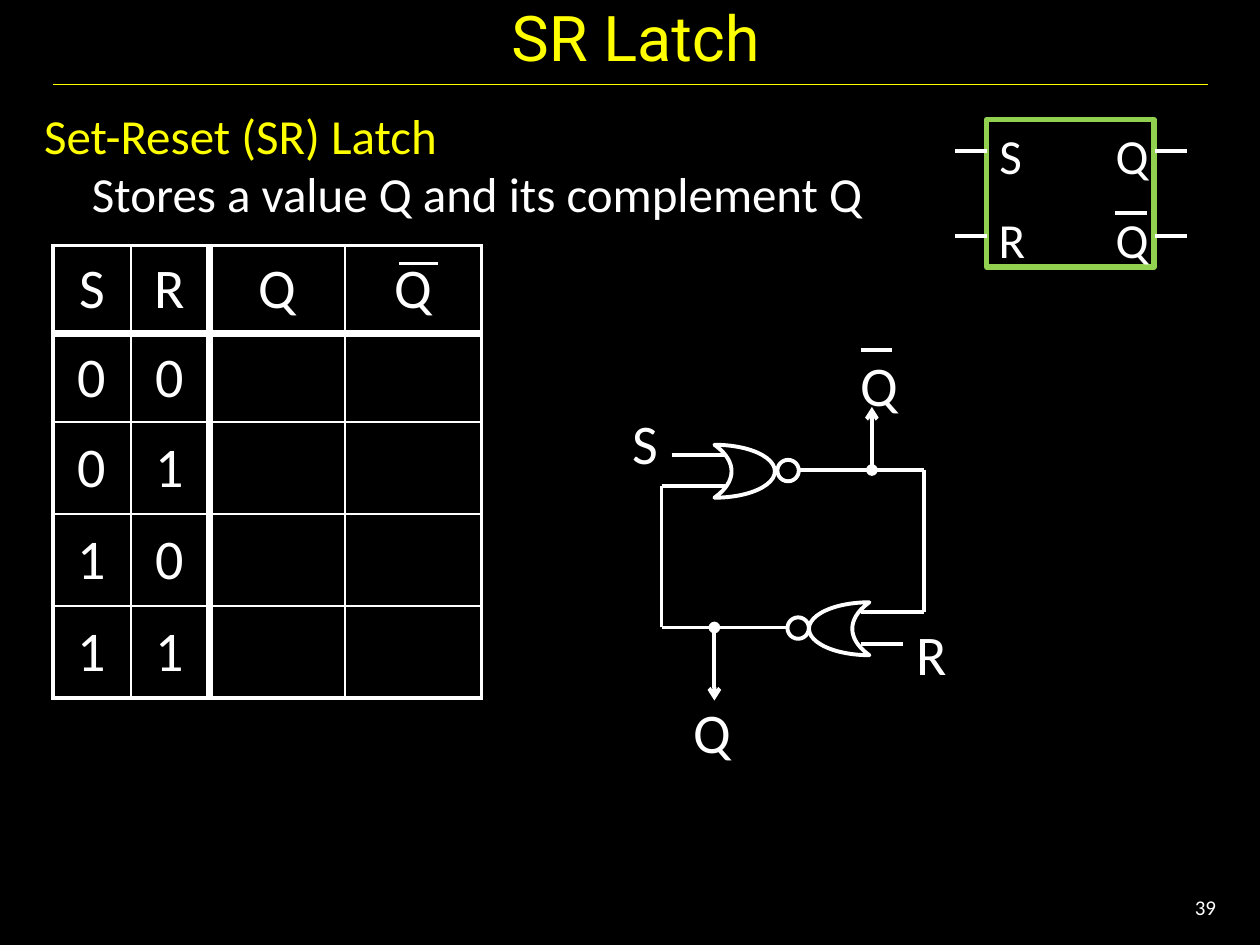
from lxml import etree
from pptx import Presentation
from pptx.dml.color import RGBColor
from pptx.enum.shapes import MSO_CONNECTOR, MSO_SHAPE
from pptx.enum.text import MSO_ANCHOR, MSO_AUTO_SIZE, PP_ALIGN
from pptx.oxml.ns import qn
from pptx.util import Inches, Pt

BLACK = RGBColor(0x00, 0x00, 0x00)
WHITE = RGBColor(0xFF, 0xFF, 0xFF)
YELLOW = RGBColor(0xFF, 0xFF, 0x00)
GREEN = RGBColor(0x92, 0xD0, 0x50)
STRAIGHT = MSO_CONNECTOR.STRAIGHT
RECTANGLE, OVAL, MOON = MSO_SHAPE.RECTANGLE, MSO_SHAPE.OVAL, MSO_SHAPE.MOON
LEFT, CENTER, RIGHT = PP_ALIGN.LEFT, PP_ALIGN.CENTER, PP_ALIGN.RIGHT
MIDDLE, TOP = MSO_ANCHOR.MIDDLE, MSO_ANCHOR.TOP
NO_FIT, GROW = MSO_AUTO_SIZE.NONE, MSO_AUTO_SIZE.SHAPE_TO_FIT_TEXT


def add_wire(x1, y1, x2, y2, color=WHITE, width=2.25):
    wire = slide.shapes.add_connector(
        STRAIGHT, Inches(x1), Inches(y1), Inches(x2), Inches(y2))
    wire.line.color.rgb = color
    wire.line.width = Pt(width)
    etree.SubElement(wire._element.spPr, qn("a:effectLst"))
    return wire


def style_paragraph(paragraph, size, color=WHITE, align=CENTER, font="Calibri"):
    paragraph.alignment = align
    for run in paragraph.runs:
        run.font.name = font
        run.font.size = Pt(size)
        run.font.color.rgb = color


prs = Presentation()
prs.slide_width, prs.slide_height = Inches(10), Inches(7.5)
slide = prs.slides.add_slide(prs.slide_layouts[1])
slide.background.fill.solid()
slide.background.fill.fore_color.rgb = BLACK

# Title and rule
title = slide.shapes.title
title.left, title.top, title.width, title.height = (
    Inches(0.42), Inches(0), Inches(9.25), Inches(0.58))
title.text_frame.text = "SR Latch"
title.text_frame.auto_size = NO_FIT
title.text_frame.vertical_anchor = MIDDLE
style_paragraph(title.text_frame.paragraphs[0], 36, YELLOW, font="Roboto")
add_wire(0.42, 0.67, 9.59, 0.67, YELLOW, 0.75)

# Description
description = slide.placeholders[1]
description.left, description.top, description.width, description.height = (
    Inches(0.25), Inches(0.87), Inches(9.5), Inches(1.25))
description.text_frame.text = (
    "Set-Reset (SR) Latch\nStores a value Q and its complement Q")
description.text_frame.auto_size = NO_FIT
description.text_frame.vertical_anchor = TOP
for paragraph, color, first_indent in zip(
        description.text_frame.paragraphs, (YELLOW, WHITE), (-0.38, 0)):
    style_paragraph(paragraph, 28, color, LEFT)
    paragraph.line_spacing = 0.82
    paragraph.space_before = Pt(5.6)
    properties = paragraph._p.get_or_add_pPr()
    properties.set("marL", str(Inches(0.38)))
    properties.set("indent", str(Inches(first_indent)))
    etree.SubElement(properties, qn("a:buNone"))

# Truth table: thick lines below the header and between inputs and outputs
TRUTH_ROWS = ["SRQQ", "00", "01", "10", "11"]
ROW_LINES = [2.25, 4.5, 1, 1, 1, 2.25]
COLUMN_LINES = [2.25, 1, 4.5, 1, 2.25]
truth_table = slide.shapes.add_table(
    5, 4, Inches(0.42), Inches(1.95), Inches(3.4), Inches(3.59)).table
truth_table.first_row = truth_table.horz_banding = False
for column, width in zip(truth_table.columns, (0.62, 0.62, 1.08, 1.08)):
    column.width = Inches(width)
for row, height in zip(truth_table.rows, (0.7, 0.7, 0.73, 0.73, 0.73)):
    row.height = Inches(height)
for r, values in enumerate(TRUTH_ROWS):
    for c in range(4):
        cell = truth_table.cell(r, c)
        cell.vertical_anchor = MIDDLE
        if c < len(values):
            cell.text_frame.text = values[c]
            style_paragraph(cell.text_frame.paragraphs[0], 32)
        cell_properties = cell._tc.get_or_add_tcPr()
        for side, weight in (("L", COLUMN_LINES[c]), ("R", COLUMN_LINES[c + 1]),
                             ("T", ROW_LINES[r]), ("B", ROW_LINES[r + 1])):
            border = etree.SubElement(
                cell_properties, qn(f"a:ln{side}"), w=str(Pt(weight)))
            border_fill = etree.SubElement(border, qn("a:solidFill"))
            etree.SubElement(border_fill, qn("a:srgbClr"), val=str(WHITE))
        cell.fill.background()
add_wire(3.17, 2.09, 3.48, 2.09, width=2)

# Outlines: latch symbol, then gates and inverting bubbles (top, bottom)
for kind, x, y, w, h, color, weight, rotation in [
        (RECTANGLE, 7.83, 0.95, 1.33, 1.17, GREEN, 3, 0),
        (MOON, 5.67, 3.53, 0.48, 0.42, WHITE, 2.25, 180),
        (OVAL, 6.17, 3.65, 0.17, 0.17, WHITE, 2.25, 0),
        (MOON, 6.42, 4.78, 0.48, 0.42, WHITE, 2.25, 0),
        (OVAL, 6.25, 4.9, 0.17, 0.17, WHITE, 2.25, 0)]:
    outline = slide.shapes.add_shape(kind, Inches(x), Inches(y), Inches(w), Inches(h))
    outline.shadow.inherit = False
    outline.fill.background()
    outline.line.color.rgb = color
    outline.line.width = Pt(weight)
    outline.rotation = rotation
    if kind == MOON:
        outline.adjustments[0] = 0.717

# Latch symbol pins
for pin_y in (1.2, 1.87):
    for pin_x in (7.58, 9.17):
        add_wire(pin_x, pin_y, pin_x + 0.25, pin_y)

# Bars over the complemented outputs
for bar_x, bar_y in ((8.85, 1.69), (6.83, 2.78)):
    add_wire(bar_x, bar_y, bar_x + 0.25, bar_y)

# Gate inputs and cross-coupled feedback
for ends in [(5.33, 3.61, 5.75, 3.61), (6.83, 5.11, 7.17, 5.11),
             (6.33, 3.73, 7.33, 3.73), (7.33, 3.73, 7.33, 4.86),
             (7.33, 4.86, 6.83, 4.86),
             (6.25, 4.98, 5.25, 4.98), (5.25, 4.98, 5.25, 3.86),
             (5.25, 3.86, 5.75, 3.86)]:
    add_wire(*ends)

# Output taps run from a junction dot to an arrowhead
for x, junction_y, tip_y in ((6.92, 3.73, 3.23), (5.67, 4.98, 5.56)):
    tap_line = add_wire(x, junction_y, x, tip_y).line._get_or_add_ln()
    etree.SubElement(tap_line, qn("a:headEnd"), type="oval")
    etree.SubElement(tap_line, qn("a:tailEnd"), type="arrow")

# Signal names
for name, x, y, w, h, size in [
        ("S", 7.83, 0.87, 0.38, 0.61, 28), ("R", 7.82, 1.54, 0.42, 0.61, 28),
        ("Q", 8.75, 0.87, 0.47, 0.61, 28), ("Q", 8.75, 1.54, 0.47, 0.61, 28),
        ("S", 4.92, 3.11, 0.41, 0.69, 32), ("R", 7.17, 4.78, 0.45, 0.69, 32),
        ("Q", 5.4, 5.4, 0.5, 0.69, 32), ("Q", 6.73, 2.65, 0.5, 0.69, 32)]:
    signal = slide.shapes.add_textbox(
        Inches(x), Inches(y), Inches(w), Inches(h)).text_frame
    signal.text = name
    signal.word_wrap = False
    signal.auto_size = GROW
    signal.paragraphs[0].line_spacing = 1.16
    style_paragraph(signal.paragraphs[0], size)

# Page number
page_number = slide.shapes.add_textbox(
    Inches(8.92), Inches(7), Inches(0.83), Inches(0.4)).text_frame
page_number.text = "39"
page_number.word_wrap = True
page_number.vertical_anchor = MIDDLE
style_paragraph(page_number.paragraphs[0], 12, align=RIGHT)

prs.save("out.pptx")
